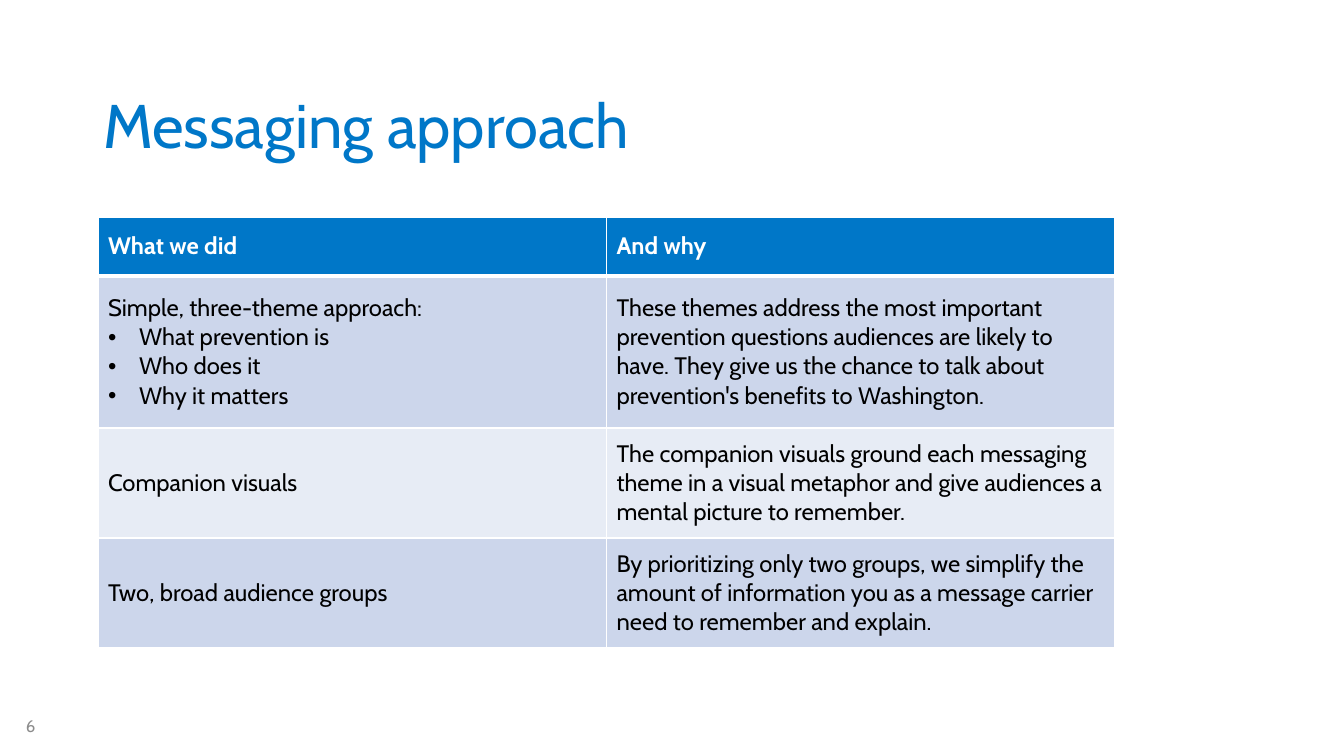
import pptx
import pptx.util
import pptx.dml.color
import pptx.enum.text
import pptx.oxml.ns
import lxml.etree

PX = 914400 / 100.8
FONT = "Cabin"
COLORS = {
    "blue": "0077C8",
    "white": "FFFFFF",
    "black": "000000",
    "grey": "8C8C8C",
    "dark_band": "CCD6EB",
    "light_band": "E7ECF5",
}
MIDDLE = pptx.enum.text.MSO_ANCHOR.MIDDLE
HEADERS = ["What we did", "And why"]
ROWS = [
    (
        ["Simple, three-theme approach:", "What prevention is", "Who does it", "Why it matters"],
        ["These themes address the most important prevention questions audiences are likely to have. "
         "They give us the chance to talk about prevention's benefits to Washington."],
    ),
    (
        ["Companion visuals"],
        ["The companion visuals ground each messaging theme in a visual metaphor "
         "and give audiences a mental picture to remember."],
    ),
    (
        ["Two, broad audience groups"],
        ["By prioritizing only two groups, we simplify the amount of information "
         "you as a message carrier need to remember and explain."],
    ),
]
ROW_HEIGHTS = [59, 152, 110, 110]


def px(n):
    return pptx.util.Emu(round(n * PX))


def rgb(name):
    return pptx.dml.color.RGBColor.from_string(COLORS[name])


def add_run(p, text, size, color, bold=False):
    r = p.add_run()
    r.text = text
    r.font.name = FONT
    r.font.size = pptx.util.Pt(size)
    r.font.bold = bold
    r.font.color.rgb = rgb(color)


def add_sub(parent, tag, **attrs):
    return lxml.etree.SubElement(parent, pptx.oxml.ns.qn(tag), **attrs)


def set_bullet(p):
    pPr = p._p.get_or_add_pPr()
    pPr.set("marL", str(px(31)))
    pPr.set("indent", str(-px(31)))
    add_sub(pPr, "a:buFont", typeface="Arial")
    add_sub(pPr, "a:buChar", char="•")


def set_borders(cell, top, bottom):
    tcPr = cell._tc.get_or_add_tcPr()
    for side, width in (("L", 1), ("R", 1), ("T", top), ("B", bottom)):
        ln = add_sub(tcPr, f"a:ln{side}", w=str(pptx.util.Pt(width)))
        add_sub(add_sub(ln, "a:solidFill"), "a:srgbClr", val=COLORS["white"])


def fill_cell(cell, lines, row):
    set_borders(cell, 3 if row == 1 else 1, 3 if row == 0 else 1)
    cell.fill.solid()
    cell.fill.fore_color.rgb = rgb("blue" if row == 0 else "dark_band" if row % 2 else "light_band")
    cell.vertical_anchor = MIDDLE
    tf = cell.text_frame
    for i, line in enumerate(lines):
        p = tf.add_paragraph() if i else tf.paragraphs[0]
        if i:
            set_bullet(p)
        add_run(p, line, 17, "black" if row else "white", bold=row == 0)


def add_title(s, x, y, w, h):
    sp = s.shapes.title
    sp.left, sp.top, sp.width, sp.height = px(x), px(y), px(w), px(h)
    tf = sp.text_frame
    tf.vertical_anchor = MIDDLE
    p = tf.paragraphs[0]
    p.alignment = pptx.enum.text.PP_ALIGN.LEFT
    p.line_spacing = 0.9
    add_run(p, "Messaging approach", 44, "blue")


def add_page_number(s, x, y, w, h):
    tf = s.shapes.add_textbox(px(x), px(y), px(w), px(h)).text_frame
    tf.word_wrap = True
    tf.vertical_anchor = MIDDLE
    tf.margin_top = tf.margin_bottom = 0
    add_run(tf.paragraphs[0], "6", 12, "grey")


def add_approach_table(s, x, y, w):
    rows = [[[h] for h in HEADERS], *ROWS]
    frame = s.shapes.add_table(len(rows), len(HEADERS), px(x), px(y), px(w), px(sum(ROW_HEIGHTS)))
    table = frame.table
    table.horz_banding = False
    for column in table.columns:
        column.width = px(w / len(HEADERS))
    for i, (row, height) in enumerate(zip(rows, ROW_HEIGHTS)):
        table.rows[i].height = px(height)
        for j, lines in enumerate(row):
            fill_cell(table.cell(i, j), lines, i)


def main():
    prs = pptx.Presentation()
    prs.slide_width, prs.slide_height = px(1344), px(756)
    s = prs.slides.add_slide(prs.slide_layouts[5])
    add_title(s, 93, 76, 1160, 105)
    add_page_number(s, 16, 717, 102, 18)
    add_approach_table(s, 98, 217, 1017)
    prs.save("out.pptx")


if __name__ == "__main__":
    main()
